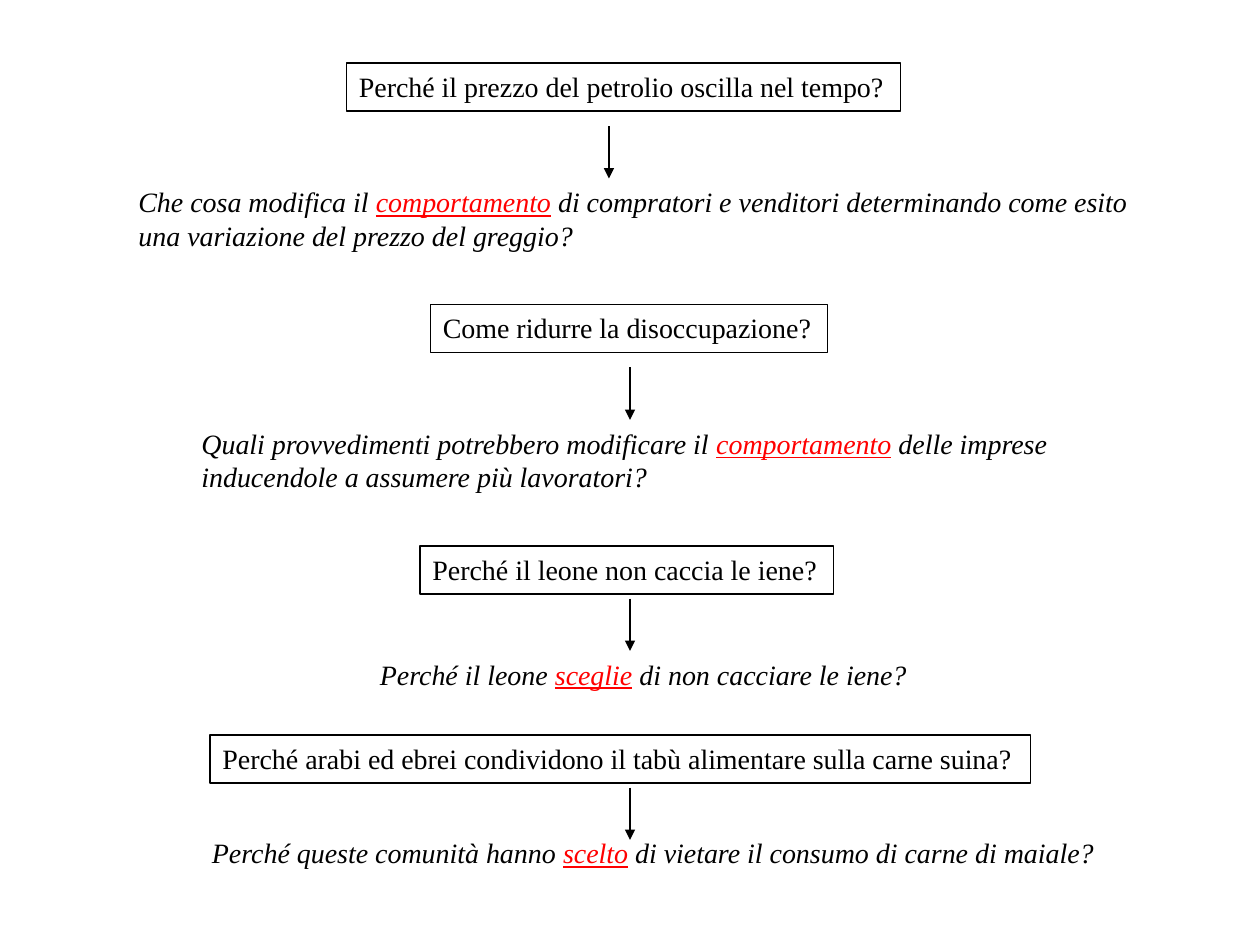
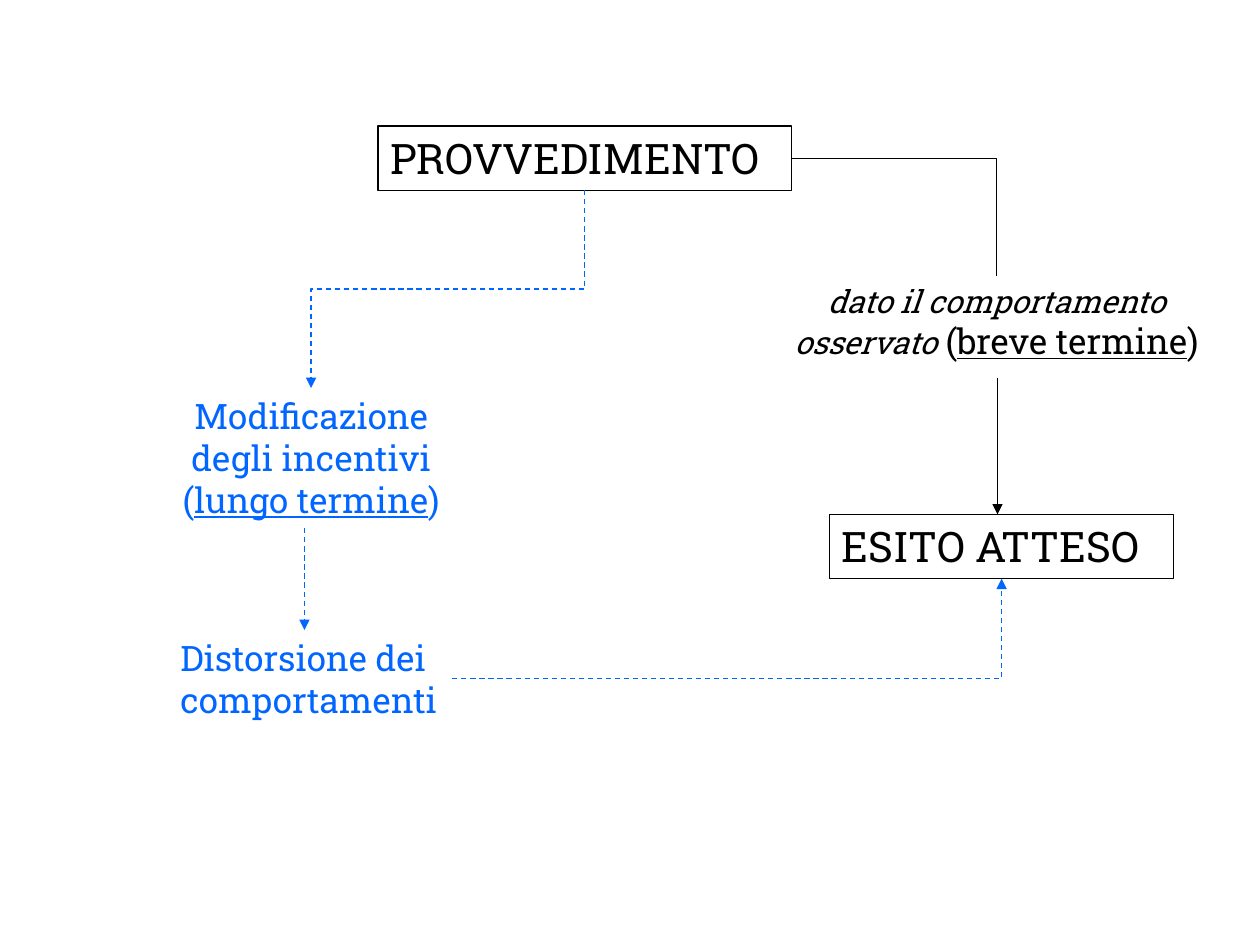
from lxml import etree
from pptx import Presentation
from pptx.dml.color import RGBColor
from pptx.enum.dml import MSO_LINE
from pptx.enum.shapes import MSO_CONNECTOR
from pptx.enum.text import MSO_AUTO_SIZE, PP_ALIGN
from pptx.oxml.ns import qn
from pptx.util import Pt

STRAIGHT, ELBOW = MSO_CONNECTOR.STRAIGHT, MSO_CONNECTOR.ELBOW
LEFT, CENTER = PP_ALIGN.LEFT, PP_ALIGN.CENTER
DASH = MSO_LINE.DASH
FIT = MSO_AUTO_SIZE.SHAPE_TO_FIT_TEXT

COLORS = {"ink": "000000", "key": "FF0000", "long_term": "0066FF"}
SERIF, SLAB = "Times New Roman", "Roboto Slab"
LINE_WIDTH = Pt(0.75)


def add_text(page, place, paragraphs, font, align=LEFT, framed=False, wrap=False):
    """Each paragraph is a list of (text, size, color, style); style holds "i" and/or "u"."""
    box = page.shapes.add_textbox(*[Pt(length) for length in place])
    frame = box.text_frame
    frame.word_wrap = wrap
    frame.auto_size = FIT
    if framed:
        box.line.color.rgb = RGBColor.from_string(COLORS["ink"])
        box.line.width = LINE_WIDTH
    for index, spans in enumerate(paragraphs):
        para = frame.add_paragraph() if index else frame.paragraphs[0]
        para.alignment = align
        for text, size, color, style in spans:
            span = para.add_run()
            span.text = text
            span.font.name = font
            span.font.size = Pt(size)
            span.font.color.rgb = RGBColor.from_string(COLORS[color])
            span.font.italic = "i" in style
            span.font.underline = "u" in style


def add_link(page, ends, color="ink", kind=STRAIGHT, arrow=True):
    link = page.shapes.add_connector(kind, *[Pt(length) for length in ends])
    link.line.color.rgb = RGBColor.from_string(COLORS[color])
    link.line.width = LINE_WIDTH
    if color == "long_term":
        link.line.dash_style = DASH
    properties = link._element.spPr
    if arrow:
        etree.SubElement(properties.find(qn("a:ln")), qn("a:tailEnd"), type="triangle")
    etree.SubElement(properties, qn("a:effectLst"))
    return link


deck = Presentation()
deck.slide_width, deck.slide_height = Pt(720), Pt(540)
blank = deck.slide_layouts[6]

# Slide 1: each question is restated in terms of behaviour or choice
page = deck.slides.add_slide(blank)
ARROW_LENGTH = 30
# question, (left, top, width), arrow x and drop, answer (left, drop, width), answer lines
questions = [
    ("Perché il prezzo del petrolio oscilla nel tempo?", (198, 36, 316.8), (348, 36),
     (72, 66, 582.5),
     [("Che cosa modifica il ", "comportamento",
       " di compratori e venditori determinando come esito"),
      ("una variazione del prezzo del greggio?",)]),
    ("Come ridurre la disoccupazione?", (246, 174, 226.8), (360, 36),
     (108, 66, 503.3),
     [("Quali provvedimenti potrebbero modificare il ", "comportamento",
       " delle imprese"),
      ("inducendole a assumere più lavoratori?",)]),
    ("Perché il leone non caccia le iene?", (240, 312, 236.2), (360, 30),
     (210, 60, 318.2),
     [("Perché il leone ", "sceglie", " di non cacciare le iene?")]),
    ("Perché arabi ed ebrei condividono il tabù alimentare sulla carne suina?",
     (120, 420, 468.7), (360, 30),
     (114, 54, 522),
     [("Perché queste comunità hanno ", "scelto",
       " di vietare il consumo di carne di maiale?")]),
]
for question, (left, top, width), (arrow_x, arrow_drop), answer_place, lines in questions:
    add_text(page, (left, top, width, 27.4), [[(question, 16, "ink", "")]], SERIF, framed=True)
    arrow_top = top + arrow_drop
    add_link(page, (arrow_x, arrow_top, arrow_x, arrow_top + ARROW_LENGTH))
    answer_left, answer_drop, answer_width = answer_place
    answer = [[(text, 16, "key" if part == 1 else "ink", "iu" if part == 1 else "i")
               for part, text in enumerate(line)] for line in lines]
    add_text(page, (answer_left, top + answer_drop, answer_width, 7.2 + 19.4 * len(lines)),
             answer, SERIF)

# Slide 2: short-term and long-term paths from measure to outcome
page = deck.slides.add_slide(blank)
for label, place in [("PROVVEDIMENTO", (216, 72, 236.2, 36.7)),
                     ("ESITO ATTESO", (474, 294, 196.6, 36.7))]:
    add_text(page, place, [[(label, 24, "ink", "")]], SLAB, framed=True)

add_text(page, (90, 222, 175.7, 79.9),
         [[("Modificazione degli incentivi (", 20, "long_term", ""),
           ("lungo termine", 20, "long_term", "u"),
           (")", 20, "long_term", "")]], SLAB, CENTER, wrap=True)
add_text(page, (96, 360, 162.7, 55.4),
         [[("Distorsione dei", 20, "long_term", "")],
          [("comportamenti", 20, "long_term", "")]], SLAB)
add_text(page, (443.5, 157.7, 252, 53.3),
         [[("dato il comportamento", 18, "ink", "i")],
          [("osservato", 18, "ink", "i"), (" (", 20, "ink", ""),
           ("breve termine", 20, "ink", "u"), (")", 20, "ink", "")]], SLAB, CENTER)

# The step down to the incentives is a three-part elbow turned by 90 degrees
to_incentives = add_link(page, (199.4, 87.1, 312.4, 243.4), "long_term", ELBOW)
to_incentives._element.spPr.find(qn("a:xfrm")).set("rot", "5400000")

# Single-corner elbows: across first, then up or down
to_behaviour = add_link(page, (452.2, 90.4, 569.5, 157.7), "ink", ELBOW, arrow=False)
to_outcome = add_link(page, (258.5, 387.7, 572.4, 330.7), "long_term", ELBOW)
for corner in (to_behaviour, to_outcome):
    corner._element.spPr.find(qn("a:prstGeom")).set("prst", "bentConnector2")

add_link(page, (570, 216, 570, 294))
add_link(page, (174, 301.9, 174, 360), "long_term")

deck.save("out.pptx")
